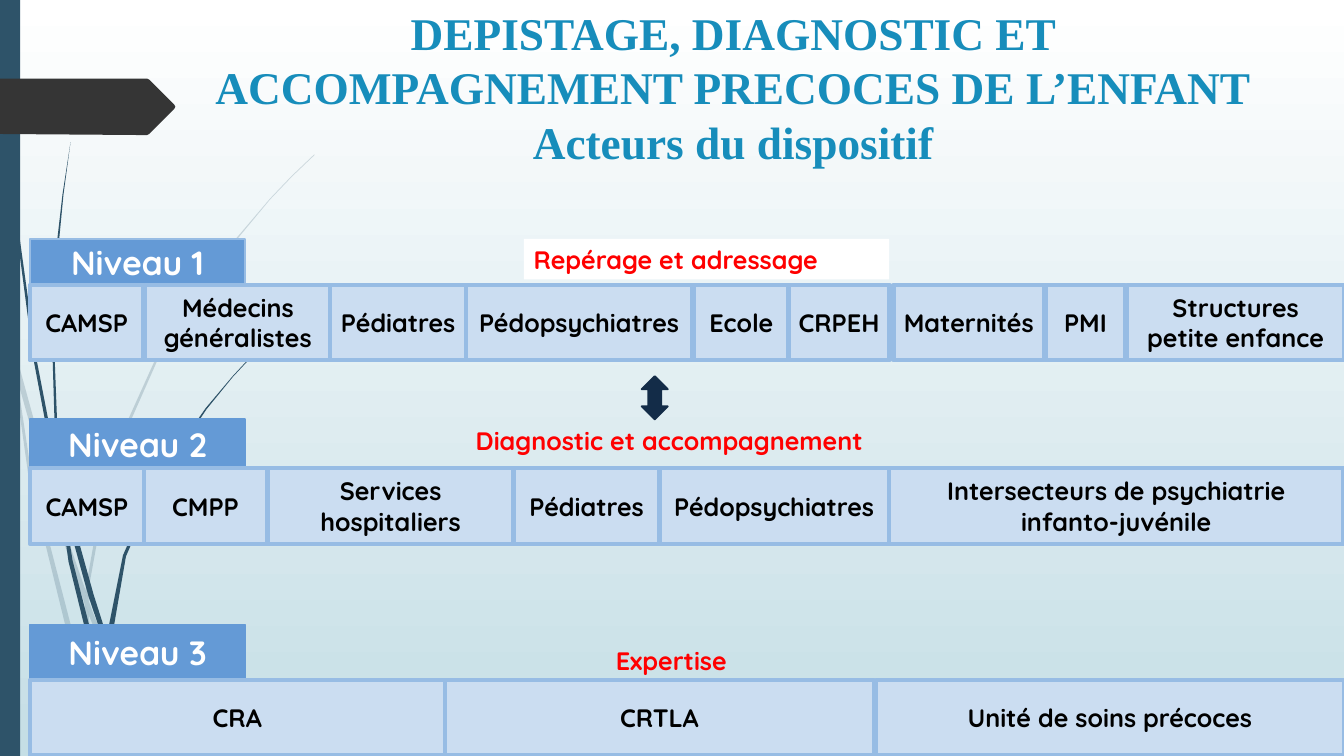
from lxml.etree import SubElement
from pptx import Presentation
from pptx.dml.color import RGBColor
from pptx.enum.shapes import MSO_SHAPE as Shape
from pptx.enum.text import MSO_ANCHOR as Anchor, MSO_AUTO_SIZE as AutoSize, PP_ALIGN as Align
from pptx.oxml.ns import qn
from pptx.util import Cm, Pt

COLORS = {
    "sky": "FFFFFF", "mist": "C5DEE5", "stem": "2E5369", "tab": "353535",
    "title": "178DBB", "level": "649AD6", "cell": "CBDDF1", "edge": "97BCE4",
    "arrow": "132C48", "white": "FFFFFF", "black": "000000", "caption": "FF0000",
}
BODY_FONT = "Quicksand"
LEFT, LEVEL_WIDTH, ROW_HEIGHT = 0.75, 5.43, 1.9
GRID = 2.54  # cm per unit of the outlines below

PALE_BLADES = [
    [(0.11, 3.5), (0.09, 3.22), (0, 2.82), (0, 2.99), (0.1, 3.44)],
    [(0.58, 5.22), (0.84, 5.99), (0.85, 5.86), (0.62, 5.2), (0.14, 3.45), (0.17, 3.76)],
    [(0.92, 6.07), (0.88, 5.96), (0.88, 6.1), (1.23, 6.94), (1.5, 7.51), (1.55, 7.51), (1.27, 6.92)],
    [(1.19, 7.51), (1.24, 7.51), (1.05, 7.11)],
    [(0.93, 6.83), (0.7, 6.19), (0.31, 4.69), (0.17, 3.76), (0.11, 3.5), (0.28, 4.7),
     (0.65, 6.21), (0.92, 6.93), (1.01, 7.14), (0.99, 7.07)],
    [(0.84, 5.99), (0.87, 6.46), (0.93, 6.83), (0.96, 6.92), (1.05, 7.11), (1.03, 7.06),
     (0.91, 6.46), (0.88, 6.1), (0.88, 6.08)],
    [(0.88, 5.84), (1.1, 4.62), (1.6, 3.49), (2.29, 2.45), (2.68, 1.98), (2.9, 1.75), (3.12, 1.54),
     (3.12, 1.53), (2.89, 1.75), (2.68, 1.97), (2.28, 2.44), (1.58, 3.48), (1.07, 4.61),
     (0.85, 5.84), (0.85, 5.86), (0.88, 5.96)],
    [(1.01, 7.14), (1.14, 7.51), (1.19, 7.51)],
    [(0.88, 6.08), (0.88, 6.1), (0.88, 5.96), (0.85, 5.86), (0.84, 5.99)],
    [(0.96, 6.92), (0.93, 6.83), (0.99, 7.07), (1.01, 7.14), (1.19, 7.51), (1.05, 7.11)],
]
DARK_BLADES = [
    [(0.07, 1.1), (0.17, 2.33), (0.33, 3.55), (0.56, 4.77), (0.57, 4.81), (0.55, 4.57), (0.55, 4.53),
     (0.36, 3.55), (0.19, 2.32), (0.08, 1.09), (0.05, 0.48), (0.04, 0), (0.03, 0), (0.04, 0.48)],
    [(0.88, 5.92), (1.06, 6.45), (1.06, 6.33), (1.06, 6.31), (0.93, 5.9), (0.6, 4.72), (0.64, 5.05)],
    [(1.13, 6.49), (1.1, 6.41), (1.11, 6.56), (1.32, 7.08), (1.52, 7.49), (1.57, 7.49), (1.36, 7.06)],
    [(1.1, 6.91), (0.98, 6.57), (0.72, 5.56), (0.64, 5.05), (0.57, 4.77), (0.68, 5.57),
     (0.93, 6.59), (1.11, 7.08), (1.17, 7.22), (1.16, 7.17)],
    [(0.6, 4.72), (0.58, 4.53), (0.54, 3.49), (0.58, 2.45), (0.63, 1.93), (0.7, 1.41),
     (0.62, 1.93), (0.56, 2.45), (0.52, 3.49), (0.55, 4.49)],
    [(1.33, 7.49), (1.36, 7.49), (1.22, 7.19)],
    [(0.57, 4.77), (0.64, 5.05), (0.6, 4.72), (0.55, 4.49), (0.55, 4.53)],
    [(1.11, 6.33), (1.25, 5.52), (1.58, 4.76), (2.05, 4.06), (2.31, 3.74), (2.45, 3.59), (2.61, 3.44),
     (2.6, 3.44), (2.45, 3.58), (2.31, 3.73), (2.04, 4.05), (1.56, 4.74), (1.22, 5.51),
     (1.06, 6.31), (1.1, 6.41)],
    [(1.17, 7.22), (1.27, 7.49), (1.31, 7.49)],
    [(1.06, 6.45), (1.1, 6.91), (1.16, 7.06), (1.22, 7.19), (1.21, 7.16), (1.11, 6.56), (1.09, 6.51)],
    [(1.16, 7.06), (1.1, 6.91), (1.16, 7.17), (1.17, 7.22), (1.3, 7.49), (1.33, 7.49), (1.22, 7.19)],
]
TAB = [(1.73, 1.08), (1.48, 1.33), (1.46, 1.34), (1.36, 1.34), (0, 1.33), (0, 0.78),
       (1.46, 0.78), (1.48, 0.79), (1.73, 1.04), (1.74, 1.06)]

# Level: name, border, top, cell top, caption (text, left, top, width, fill), cells (text, left, width)
LEVELS = [
    ("Niveau 1", "edge", 6.03, 7.18, ("Repérage et adressage", 13.2, 6.02, 9.21, "white"), [
        ("CAMSP", LEFT, 2.87), ("Médecins généralistes", 3.66, 4.67), ("Pédiatres", 8.32, 3.43),
        ("Pédopsychiatres", 11.75, 5.69), ("Ecole", 17.48, 2.41), ("CRPEH", 19.87, 2.55),
        ("Maternités", 22.52, 3.79), ("PMI", 26.35, 2.01), ("Structures petite enfance", 28.4, 5.48)]),
    ("Niveau 2", "level", 10.56, 11.8, ("Diagnostic et accompagnement", 11.74, 10.59, 11.1, None), [
        ("CAMSP", LEFT, 2.89), ("CMPP", 3.63, 3.1), ("Services hospitaliers", 6.74, 6.21),
        ("Pédiatres", 12.94, 3.69), ("Pédopsychiatres", 16.62, 5.78),
        ("Intersecteurs de psychiatrie infanto-juvénile", 22.4, 11.46)]),
    ("Niveau 3", "level", 15.74, 17.14, ("Expertise", 15.27, 16.13, 7.21, None), [
        ("CRA", LEFT, 10.46), ("CRTLA", 11.21, 10.82), ("Unité de soins précoces", 22.07, 11.8)]),
]


def rgb(name):
    return RGBColor.from_string(COLORS[name])


def paint(shape, fill, edge=None, width=1.25):
    shape.shadow.inherit = False
    shape.fill.solid()
    shape.fill.fore_color.rgb = rgb(fill)
    if edge:
        shape.line.color.rgb = rgb(edge)
        shape.line.width = Pt(width)
    else:
        shape.line.fill.background()


def add_block(slide, kind, box, fill, edge=None, width=1.25):
    block = slide.shapes.add_shape(kind, *map(Cm, box))
    paint(block, fill, edge, width)
    return block


def write(shape, text, size, color, align=Align.CENTER, anchor=Anchor.MIDDLE, font=BODY_FONT):
    frame = shape.text_frame
    frame.auto_size = AutoSize.NONE
    frame.word_wrap = True
    frame.vertical_anchor = anchor
    frame.text = text
    paragraph = frame.paragraphs[0]
    paragraph.alignment = align
    paragraph.font.name = font
    paragraph.font.size = Pt(size)
    paragraph.font.bold = True
    paragraph.font.color.rgb = rgb(color)


def add_outline(slide, points, fill, opacity=100):
    start, *others = [(Cm(x * GRID), Cm(y * GRID)) for x, y in points]
    builder = slide.shapes.build_freeform(*start)
    builder.add_line_segments(others)
    outline = builder.convert_to_shape()
    paint(outline, fill)
    if opacity < 100:
        color = next(outline.element.spPr.iter(qn("a:srgbClr")))
        SubElement(color, qn("a:alpha"), val=str(opacity * 1000))


def add_backdrop(slide):
    fill = slide.background.fill
    fill.gradient()
    fill.gradient_angle = 270
    for stop, name in zip(fill.gradient_stops, ("sky", "mist")):
        stop.color.rgb = rgb(name)
    for blades, opacity in ((PALE_BLADES, 20), (DARK_BLADES, 100)):
        for points in blades:
            add_outline(slide, points, "stem", opacity)
    add_block(slide, Shape.RECTANGLE, (0, 0, 0.51, 19.05), "stem")
    add_outline(slide, TAB, "tab")


def add_title(slide, box):
    title = slide.shapes.title
    title.left, title.top, title.width, title.height = map(Cm, box)
    text = "DEPISTAGE, DIAGNOSTIC ET ACCOMPAGNEMENT PRECOCES DE L’ENFANT\vActeurs du dispositif"
    write(title, text, 32.4, "title", anchor=Anchor.TOP, font="Times New Roman")
    title.text_frame.paragraphs[0].line_spacing = 1.0


def add_caption(slide, text, left, top, width, fill):
    caption = slide.shapes.add_textbox(*map(Cm, (left, top, width, 1.02)))
    if fill:
        paint(caption, fill)
    write(caption, text, 18, "caption", Align.LEFT, Anchor.TOP)


def add_level(slide, name, edge, top, cell_top, caption, cells):
    header = add_block(slide, Shape.RECTANGLE, (LEFT, top, LEVEL_WIDTH, cell_top - top), "level", edge)
    write(header, name, 24, "white")
    for actor, left, width in cells:
        cell = add_block(slide, Shape.RECTANGLE, (left, cell_top, width, ROW_HEIGHT), "cell", "edge", 3)
        write(cell, actor, 18, "black")
    add_caption(slide, *caption)


def main():
    deck = Presentation()
    deck.slide_width, deck.slide_height = Cm(33.87), Cm(19.05)
    slide = deck.slides.add_slide(deck.slide_layouts[5])
    add_backdrop(slide)
    add_title(slide, (5, 0, 26.95, 5.28))
    for level in LEVELS:
        add_level(slide, *level)
    add_block(slide, Shape.UP_DOWN_ARROW, (16.17, 9.48, 0.66, 1.09), "arrow", "arrow")
    deck.save("out.pptx")


if __name__ == "__main__":
    main()
